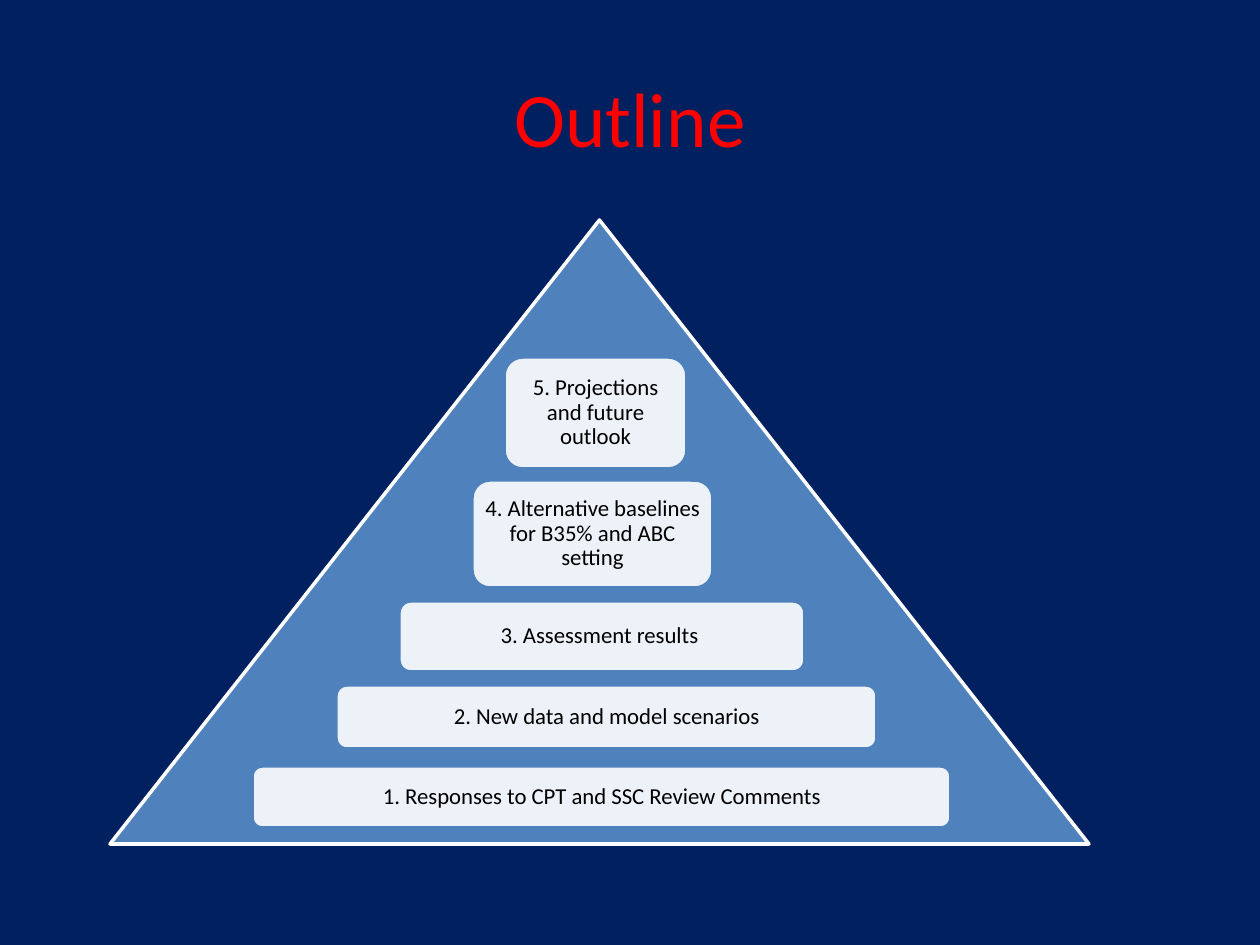
"""Build the Outline slide: a pyramid holding five numbered steps."""
from lxml import etree
from pptx import Presentation
from pptx.dml.color import RGBColor
from pptx.enum.shapes import MSO_SHAPE
from pptx.enum.text import MSO_ANCHOR, PP_ALIGN
from pptx.oxml.ns import qn
from pptx.util import Emu, Pt

TRIANGLE = MSO_SHAPE.ISOSCELES_TRIANGLE
ROUNDED = MSO_SHAPE.ROUNDED_RECTANGLE
MIDDLE = MSO_ANCHOR.MIDDLE
CENTER = PP_ALIGN.CENTER

NAVY = RGBColor(0x00, 0x20, 0x60)
RED = RGBColor(0xFF, 0x00, 0x00)
BLUE = RGBColor(0x4F, 0x81, 0xBD)
WHITE = RGBColor(0xFF, 0xFF, 0xFF)
BLACK = RGBColor(0x00, 0x00, 0x00)

FONT = "Calibri"
PX_PER_INCH = 126
INSET = 6

STEPS = [
    ("5. Projections and future outlook", 504, 357, 183, 112),
    ("4. Alternative baselines for B35% and ABC setting", 472, 480, 241, 108),
    ("3. Assessment results ", 399, 601, 406, 71),
    ("2. New data and model scenarios", 336, 685, 541, 64),
    ("1. Responses to CPT and SSC Review Comments", 252, 766, 699, 62),
]


def px(*lengths):
    return [Emu(round(length * 914400 / PX_PER_INCH)) for length in lengths]


def write(box, text, size, color):
    frame = box.text_frame
    frame.word_wrap = True
    frame.vertical_anchor = MIDDLE
    para = frame.paragraphs[0]
    para.text = text
    para.alignment = CENTER
    para.font.name = FONT
    para.font.size = Pt(size)
    para.font.color.rgb = color
    return frame, para


deck = Presentation()
deck.slide_width, deck.slide_height = px(1260, 945)
page = deck.slides.add_slide(deck.slide_layouts[6])
page.background.fill.solid()
page.background.fill.fore_color.rgb = NAVY

title = page.shapes.add_textbox(*px(63, 38, 1134, 157))
write(title, "Outline", 44, RED)

pyramid = page.shapes.add_shape(TRIANGLE, *px(110, 220, 979, 624))
pyramid.shadow.inherit = False
pyramid.fill.solid()
pyramid.fill.fore_color.rgb = BLUE
pyramid.line.color.rgb = WHITE
pyramid.line.width = Pt(2)

for text, *place in STEPS:
    step = page.shapes.add_shape(ROUNDED, *px(*place))
    step.shadow.inherit = False
    step.fill.solid()
    step.fill.fore_color.rgb = WHITE
    fill_color = step.fill._xPr.find(qn("a:solidFill")).find(qn("a:srgbClr"))
    etree.SubElement(fill_color, qn("a:alpha"), val="90000")
    step.line.color.rgb = BLUE
    step.line.width = Pt(2)
    frame, para = write(step, text, 13, BLACK)
    para.line_spacing = 0.9
    frame.margin_left, frame.margin_top = px(INSET, INSET)
    frame.margin_right, frame.margin_bottom = px(INSET, INSET)

deck.save("out.pptx")
